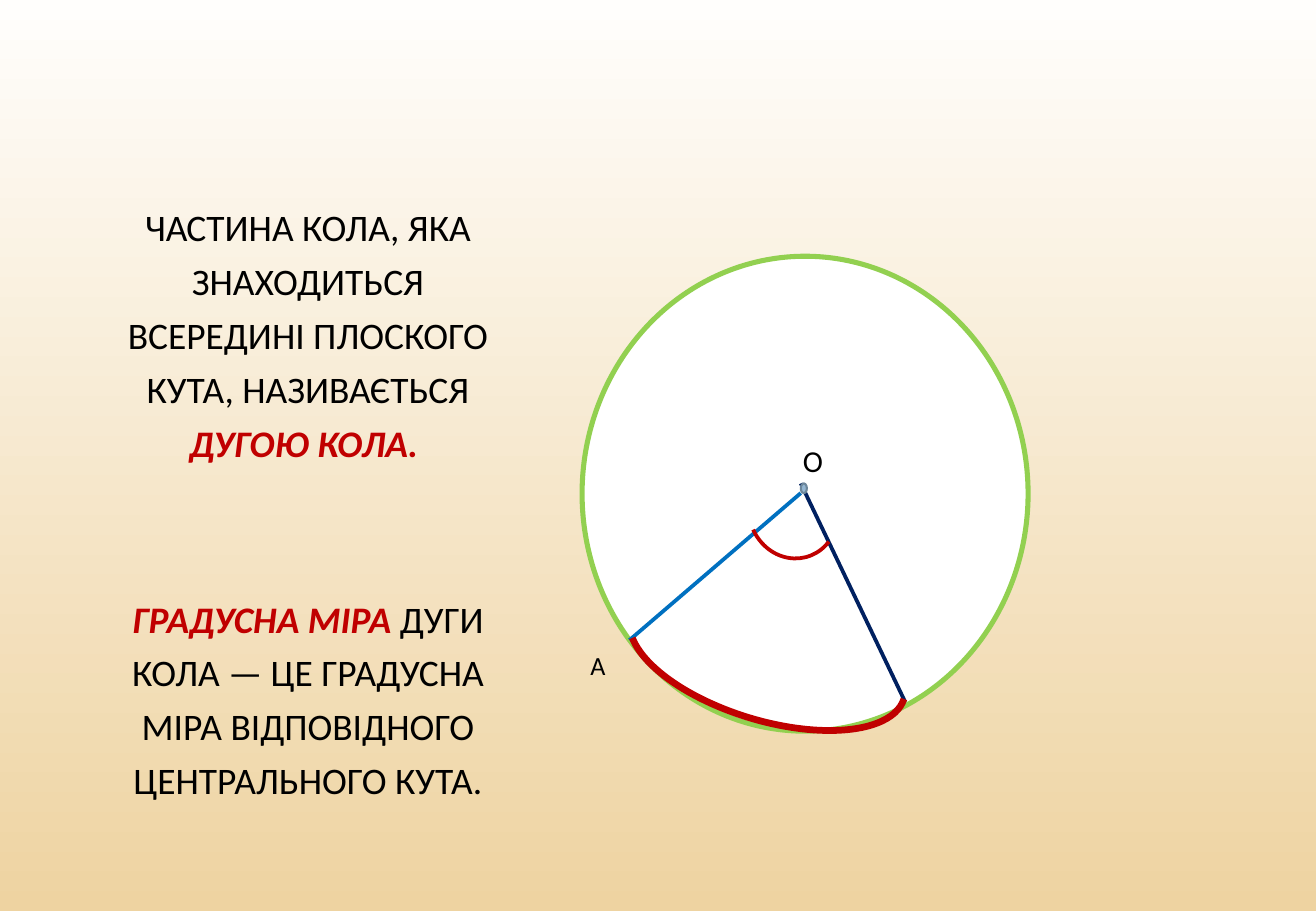
from dataclasses import dataclass

from lxml import etree
from pptx import Presentation
from pptx.dml.color import RGBColor
from pptx.enum.shapes import MSO_CONNECTOR, MSO_SHAPE
from pptx.enum.text import MSO_ANCHOR, PP_ALIGN
from pptx.oxml.ns import qn
from pptx.util import Inches, Pt

OVAL, ARC = MSO_SHAPE.OVAL, MSO_SHAPE.ARC
STRAIGHT = MSO_CONNECTOR.STRAIGHT
CENTER = PP_ALIGN.CENTER
TOP, MIDDLE = MSO_ANCHOR.TOP, MSO_ANCHOR.MIDDLE

WIDTH, HEIGHT = Inches(10.83), Inches(7.5)
FONT = "Calibri"
BLACK = RGBColor(0x00, 0x00, 0x00)
WHITE = RGBColor(0xFF, 0xFF, 0xFF)
CREAM = RGBColor(0xFF, 0xFE, 0xFC)
SAND = RGBColor(0xEE, 0xD3, 0xA1)
RED = RGBColor(0xC0, 0x00, 0x00)
GREEN = RGBColor(0x92, 0xD0, 0x50)
BLUE = RGBColor(0x00, 0x70, 0xC0)
NAVY = RGBColor(0x00, 0x20, 0x60)
DOT_FILL = RGBColor(0x94, 0xB6, 0xD2)
DOT_LINE = RGBColor(0x6D, 0x87, 0x9B)


@dataclass(frozen=True)
class Area:
    """A rectangle in percent of the slide's width and height."""
    left: float
    top: float
    width: float
    height: float

    def lengths(self) -> tuple[int, int, int, int]:
        return (across(self.left), down(self.top),
                across(self.width), down(self.height))


@dataclass(frozen=True)
class Curve:
    area: Area
    color: RGBColor
    weight: float
    fill: RGBColor | None = None
    angles: tuple[float, float] | None = None
    rotation: float = 0


@dataclass(frozen=True)
class Radius:
    start: tuple[float, float]
    end: tuple[float, float]
    color: RGBColor


@dataclass(frozen=True)
class Span:
    text: str
    key_term: bool = False


@dataclass(frozen=True)
class TextBlock:
    area: Area
    size: float
    paragraphs: tuple[tuple[Span, ...], ...]
    anchor: MSO_ANCHOR = MIDDLE
    line_spacing: float = 1.0
    gap: float = 0


CIRCLE = Curve(Area(44.23, 28.13, 33.89, 52.13), GREEN, 3, WHITE)
RADII = (
    Radius((47.83, 70.27), (60.85, 54.13), BLUE),
    Radius((68.79, 77.07), (60.85, 53.07), NAVY),
)
MARKS = (
    Curve(Area(60.85, 53.07, 0.46, 1.07), DOT_LINE, 1.25, DOT_FILL),
    Curve(Area(56.88, 50.53, 6.83, 10.8), RED, 2.25,
          angles=(141.92, 208.66), rotation=165.8),
    Curve(Area(47.46, 65.2, 21.7, 13.87), RED, 4,
          angles=(108.07, 210.73), rotation=196.9),
)
TEXTS = (
    TextBlock(Area(8.22, 20.8, 30.38, 68.4), 22.2, (
        (Span("ЧАСТИНА КОЛА, ЯКА ЗНАХОДИТЬСЯ ВСЕРЕДИНІ ПЛОСКОГО КУТА, "
              "НАЗИВАЄТЬСЯ "), Span("ДУГОЮ КОЛА. ", True)),
        (Span("ГРАДУСНА МІРА ", True),
         Span("ДУГИ КОЛА — ЦЕ ГРАДУСНА МІРА ВІДПОВІДНОГО "
              "ЦЕНТРАЛЬНОГО КУТА.")),
    ), TOP, 1.2, 72),
    TextBlock(Area(59.77, 47.5, 4, 6), 18, ((Span("О"),),)),
    TextBlock(Area(43.43, 70, 4, 6), 15.5, ((Span("А"),),)),
)


def across(percent: float) -> int:
    return round(WIDTH * percent / 100)


def down(percent: float) -> int:
    return round(HEIGHT * percent / 100)


def paint_background(page) -> None:
    fill = page.background.fill
    fill.gradient()
    fill.gradient_angle = 270
    for stop, color in zip(fill.gradient_stops, (CREAM, SAND)):
        stop.color.rgb = color


def draw_curve(page, curve: Curve) -> None:
    preset = ARC if curve.angles else OVAL
    shape = page.shapes.add_shape(preset, *curve.area.lengths())
    shape.shadow.inherit = False
    shape.rotation = curve.rotation
    for index, angle in enumerate(curve.angles or ()):
        shape.adjustments[index] = angle
    if curve.fill is None:
        shape.fill.background()
    else:
        shape.fill.solid()
        shape.fill.fore_color.rgb = curve.fill
    shape.line.color.rgb = curve.color
    shape.line.width = Pt(curve.weight)


def draw_radius(page, radius: Radius) -> None:
    (x1, y1), (x2, y2) = radius.start, radius.end
    line = page.shapes.add_connector(
        STRAIGHT, across(x1), down(y1), across(x2), down(y2))
    line.line.color.rgb = radius.color
    line.line.width = Pt(2.25)
    etree.SubElement(line._element.spPr, qn("a:effectLst"))


def write_text(page, block: TextBlock) -> None:
    frame = page.shapes.add_textbox(*block.area.lengths()).text_frame
    frame.word_wrap = True
    frame.vertical_anchor = block.anchor
    for index, spans in enumerate(block.paragraphs):
        para = frame.add_paragraph() if index else frame.paragraphs[0]
        para.alignment = CENTER
        para.line_spacing = block.line_spacing
        if index:
            para.space_before = Pt(block.gap)
        para.font.name = FONT
        para.font.size = Pt(block.size)
        for span in spans:
            run = para.add_run()
            run.text = span.text
            run.font.color.rgb = RED if span.key_term else BLACK
            run.font.bold = run.font.italic = span.key_term


def main() -> None:
    deck = Presentation()
    deck.slide_width, deck.slide_height = WIDTH, HEIGHT
    page = deck.slides.add_slide(deck.slide_layouts[6])
    paint_background(page)

    # Circle with its central angle and arc
    draw_curve(page, CIRCLE)
    for radius in RADII:
        draw_radius(page, radius)
    for mark in MARKS:
        draw_curve(page, mark)

    # Definitions and point labels
    for block in TEXTS:
        write_text(page, block)

    deck.save("out.pptx")


if __name__ == "__main__":
    main()
